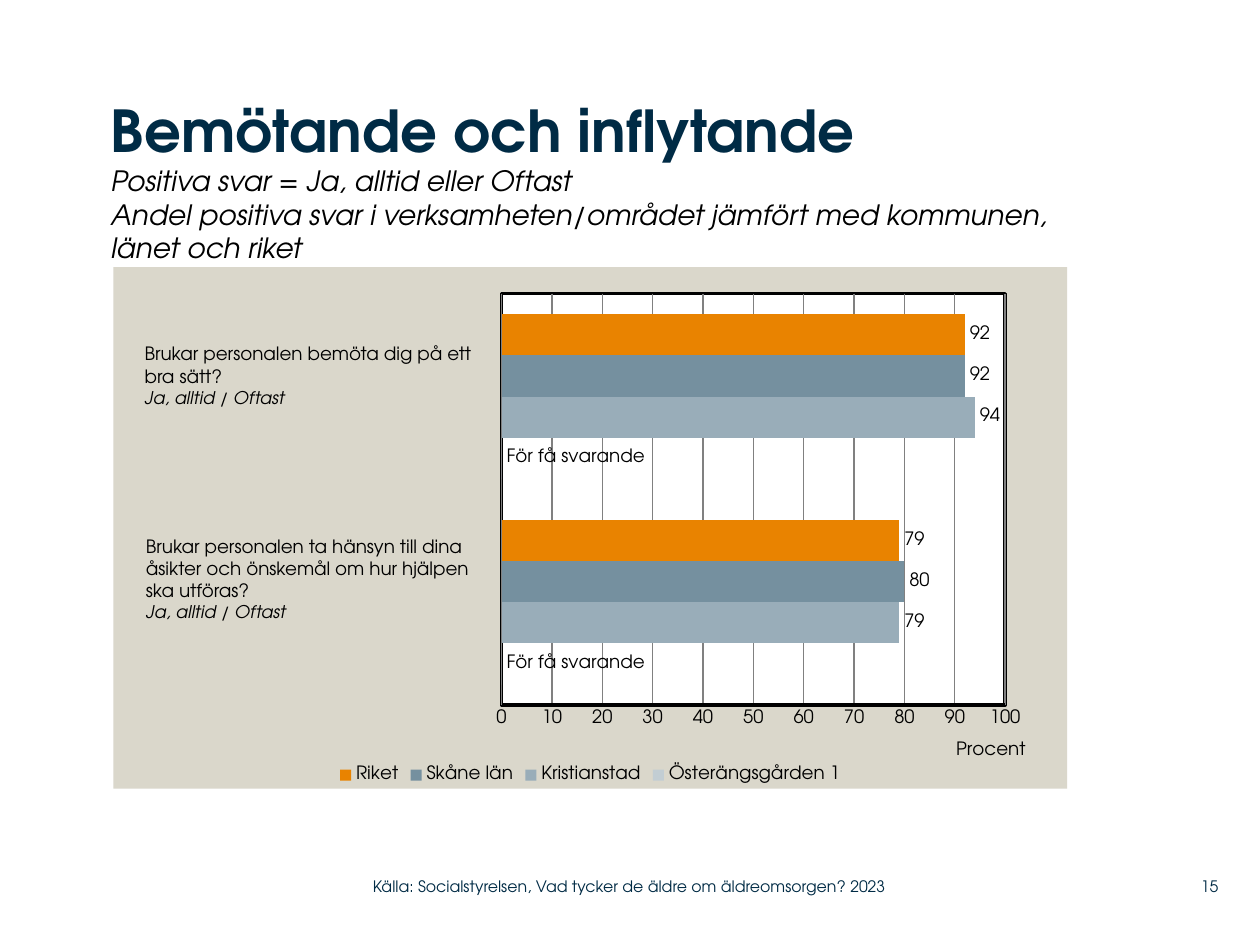
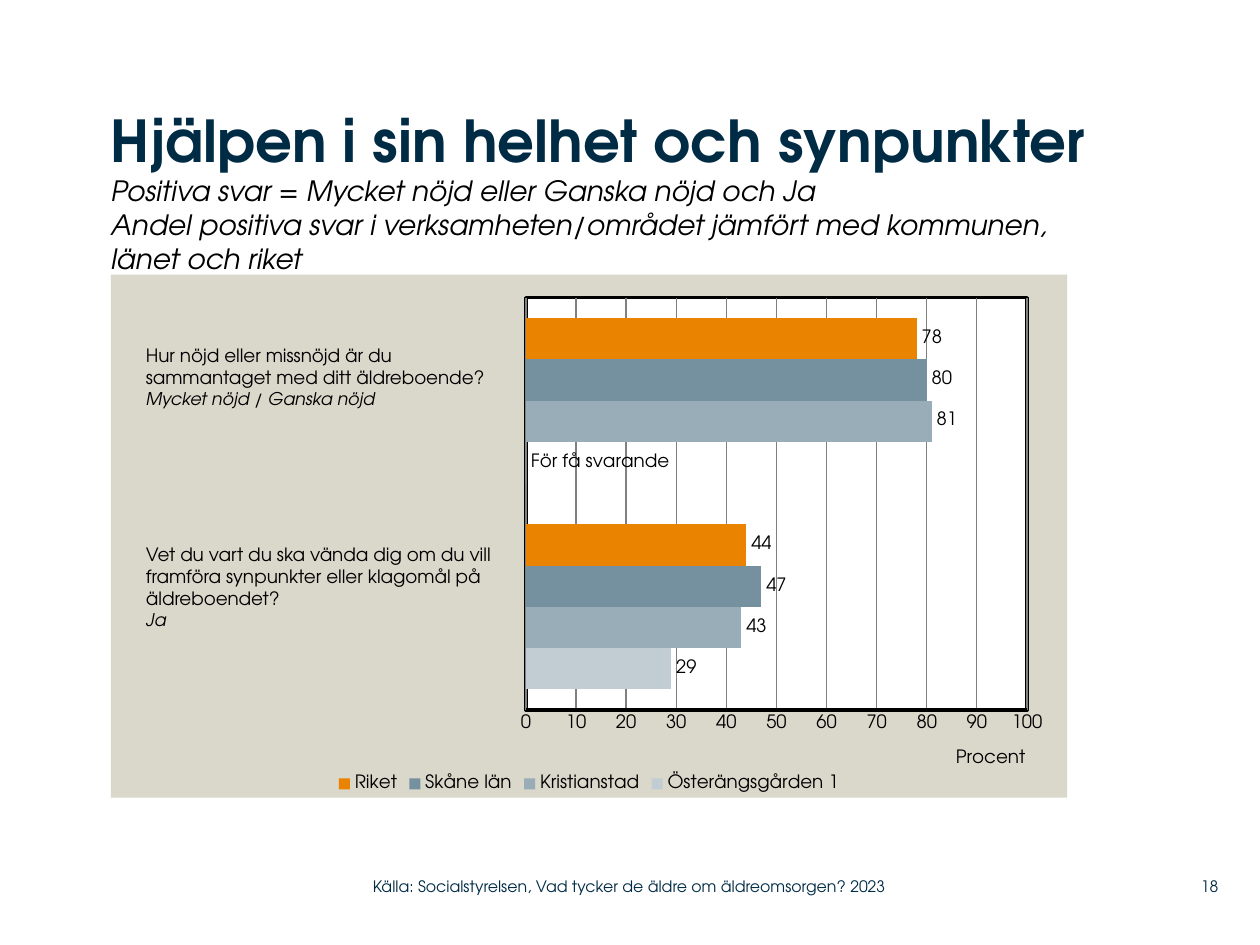
from copy import deepcopy

from pptx import Presentation
from pptx.chart.data import CategoryChartData
from pptx.dml.color import RGBColor
from pptx.enum.chart import XL_CHART_TYPE, XL_LABEL_POSITION, XL_LEGEND_POSITION, XL_TICK_MARK
from pptx.enum.text import MSO_ANCHOR, MSO_AUTO_SIZE, PP_ALIGN
from pptx.oxml import parse_xml
from pptx.oxml.ns import nsdecls, qn
from pptx.util import Inches, Pt

BAR_CLUSTERED = XL_CHART_TYPE.BAR_CLUSTERED
OUTSIDE_END = XL_LABEL_POSITION.OUTSIDE_END
LEGEND_BOTTOM = XL_LEGEND_POSITION.BOTTOM
NO_TICKS = XL_TICK_MARK.NONE
TOP, MIDDLE = MSO_ANCHOR.TOP, MSO_ANCHOR.MIDDLE
LEFT, RIGHT = PP_ALIGN.LEFT, PP_ALIGN.RIGHT
NO_AUTOFIT = MSO_AUTO_SIZE.NONE

FONT = "TeX Gyre Adventor"
NAVY = RGBColor(0x00, 0x2B, 0x45)
BLACK = RGBColor(0x00, 0x00, 0x00)
GRAY = RGBColor(0x80, 0x80, 0x80)
SAND = RGBColor(0xDA, 0xD7, 0xCB)
WHITE = RGBColor(0xFF, 0xFF, 0xFF)
SERIES_COLORS = {
    "Österängsgården 1": RGBColor(0xC2, 0xCD, 0xD3),
    "Kristianstad": RGBColor(0x99, 0xAD, 0xB9),
    "Skåne län": RGBColor(0x75, 0x90, 0x9F),
    "Riket": RGBColor(0xE9, 0x83, 0x00),
}

TITLE_ONLY = 5
BODY_SIZE = 10.5
TOO_FEW = "För få svarande"
COMPARISON = ("Andel positiva svar i verksamheten/området jämfört med kommunen, "
              "länet och riket")
SOURCE = "Källa: Socialstyrelsen, Vad tycker de äldre om äldreomsorgen? 2023"

SLIDES = [
    {
        "number": "15",
        "heading": "Bemötande och inflytande",
        "answers": "Positiva svar = Ja, alltid eller Oftast",
        "title_box": (0.88, 0.75, 8.04, 1.2),
        "chart_box": (0.9, 2.12, 7.57, 4.14),
        "plot": (0.407, 0.051, 0.528, 0.789),
        "values": [(0, 0), (79, 94), (80, 92), (79, 92)],
        "questions": [
            ((1.05, 2.67, 2.97, 0.81),
             ["Brukar personalen bemöta dig på ett", "bra sätt?"],
             "Ja, alltid / Oftast"),
            ((1.06, 4.2, 3.01, 0.98),
             ["Brukar personalen ta hänsyn till dina",
              "åsikter och önskemål om hur hjälpen", "ska utföras?"],
             "Ja, alltid / Oftast"),
        ],
    },
    {
        "number": "18",
        "heading": "Hjälpen i sin helhet och synpunkter",
        "answers": "Positiva svar = Mycket nöjd eller Ganska nöjd och Ja",
        "title_box": (0.88, 0.83, 7.79, 1.34),
        "chart_box": (0.88, 2.18, 7.59, 4.15),
        "plot": (0.434, 0.044, 0.524, 0.789),
        "values": [(29, 0), (43, 81), (47, 80), (44, 78)],
        "questions": [
            ((1.06, 2.68, 3.1, 0.81),
             ["Hur nöjd eller missnöjd är du", "sammantaget med ditt äldreboende?"],
             "Mycket nöjd / Ganska nöjd"),
            ((1.06, 4.26, 3.05, 0.81),
             ["Vet du vart du ska vända dig om du vill framföra synpunkter "
              "eller klagomål på äldreboendet?"],
             "Ja"),
        ],
    },
]


def set_layout(parent, index, **settings):
    """Give a chart part a manual layout as its child at index."""
    for layout in parent.findall(qn("c:layout")):
        parent.remove(layout)
    items = "".join(f'<c:{name} val="{value}"/>' for name, value in settings.items())
    parent.insert(index, parse_xml(
        f'<c:layout {nsdecls("c")}><c:manualLayout>{items}</c:manualLayout></c:layout>'))


def area_properties(fill, line):
    """Return the fill and outline of a chart area."""
    return parse_xml(
        f'<c:spPr {nsdecls("c", "a")}><a:solidFill><a:srgbClr val="{fill}"/></a:solidFill>'
        f'{line}</c:spPr>')


class SurveyDeck:
    """Hold the survey style and the current slide."""

    def __init__(self):
        self.presentation = Presentation()
        self.presentation.slide_width = Inches(10)
        self.presentation.slide_height = Inches(7.5)
        self.slide = None

    def add_slide(self):
        """Start a new slide."""
        layout = self.presentation.slide_layouts[TITLE_ONLY]
        self.slide = self.presentation.slides.add_slide(layout)

    def style(self, font, size, color=BLACK, bold=False, italic=False):
        """Apply the deck font."""
        font.name, font.size, font.color.rgb = FONT, Pt(size), color
        font.bold, font.italic = bold, italic

    def add_run(self, paragraph, text, size, **look):
        """Append a formatted run."""
        run = paragraph.add_run()
        run.text = text
        self.style(run.font, size, **look)
        return run

    def clear_margins(self, frame):
        """Remove the inner margins of a text frame."""
        frame.margin_left = frame.margin_right = 0
        frame.margin_top = frame.margin_bottom = 0

    def add_title(self, box, heading, subtitles):
        """Fill the title with a heading and italic lines below."""
        title = self.slide.shapes.title
        title.left, title.top, title.width, title.height = map(Inches, box)
        frame = title.text_frame
        frame.word_wrap, frame.auto_size, frame.vertical_anchor = True, NO_AUTOFIT, TOP
        self.clear_margins(frame)
        paragraph = frame.paragraphs[0]
        paragraph.alignment = LEFT
        run = self.add_run(paragraph, heading, 33, color=NAVY, bold=True)
        for subtitle in subtitles:
            paragraph.add_line_break()
            paragraph._p[-1].append(deepcopy(run._r.get_or_add_rPr()))
            run = self.add_run(paragraph, subtitle, 16, italic=True)

    def add_text_frame(self, box):
        """Add a wrapping text box and return its frame."""
        frame = self.slide.shapes.add_textbox(*map(Inches, box)).text_frame
        frame.word_wrap = True
        return frame

    def add_question(self, box, lines, answer):
        """Add a survey question with its positive answers in italics."""
        frame = self.add_text_frame(box)
        for index, line in enumerate(lines):
            paragraph = frame.add_paragraph() if index else frame.paragraphs[0]
            self.add_run(paragraph, line, BODY_SIZE)
        self.add_run(frame.add_paragraph(), answer, 10, italic=True)

    def add_footer(self, box, text, alignment):
        """Add a small navy footer text."""
        frame = self.add_text_frame(box)
        frame.vertical_anchor = MIDDLE
        self.clear_margins(frame)
        paragraph = frame.paragraphs[0]
        paragraph.alignment = alignment
        self.add_run(paragraph, text, 9, color=NAVY)

    def add_chart(self, box, plot_box, values):
        """Add the clustered bars for two questions."""
        data = CategoryChartData()
        data.categories = ["1", "2"]
        for name, series_values in zip(SERIES_COLORS, values):
            data.add_series(name, series_values)
        chart = self.slide.shapes.add_chart(BAR_CLUSTERED, *map(Inches, box), data).chart
        self.style(chart.font, BODY_SIZE)
        chart.has_title = False
        chart.has_legend = True
        chart.legend.position = LEGEND_BOTTOM
        chart.legend.include_in_layout = False
        self.style(chart.legend.font, BODY_SIZE)
        self.format_bars(chart.plots[0])
        self.format_axes(chart)
        self.format_areas(chart, plot_box)

    def format_bars(self, plot):
        """Colour the bars and label their values."""
        plot.gap_width, plot.overlap, plot.vary_by_categories = 100, 0, False
        for series in plot.series:
            series.invert_if_negative = False
            series.format.fill.solid()
            series.format.fill.fore_color.rgb = SERIES_COLORS[series.name]
            labels = series.data_labels
            labels.show_value, labels.position = True, OUTSIDE_END
            self.style(labels.font, BODY_SIZE)
            for index, value in enumerate(series.values):
                if value == 0:
                    label = series.points[index].data_label
                    paragraph = label.text_frame.paragraphs[0]
                    self.add_run(paragraph, TOO_FEW, BODY_SIZE)
                    label.position = OUTSIDE_END

    def format_axes(self, chart):
        """Hide the categories and set up the percent axis."""
        chart.category_axis.visible = False
        axis = chart.value_axis
        axis.minimum_scale, axis.maximum_scale, axis.major_unit = 0, 100, 10
        axis.major_tick_mark = axis.minor_tick_mark = NO_TICKS
        axis.format.line.color.rgb, axis.format.line.width = BLACK, Pt(2)
        axis.has_major_gridlines = True
        gridline = axis.major_gridlines.format.line
        gridline.color.rgb, gridline.width = GRAY, Pt(0.75)
        self.style(axis.tick_labels.font, BODY_SIZE)
        paragraph = axis.axis_title.text_frame.paragraphs[0]
        self.add_run(paragraph, "Procent", BODY_SIZE)
        set_layout(axis.axis_title._element, 1, xMode="edge", yMode="edge", x=0.88, y=0.9)

    def format_areas(self, chart, plot_box):
        """Fill the chart and place its framed plot area."""
        chart_element = chart._chartSpace.find(qn("c:chart"))
        chart_element.addnext(area_properties(SAND, "<a:ln><a:noFill/></a:ln>"))
        plot_area = chart_element.find(qn("c:plotArea"))
        x, y, width, height = plot_box
        set_layout(plot_area, 0, layoutTarget="inner", xMode="edge", yMode="edge",
                   x=x, y=y, w=width, h=height)
        plot_area.append(area_properties(
            WHITE, f'<a:ln w="{Pt(2)}"><a:solidFill><a:srgbClr val="{BLACK}"/>'
                   '</a:solidFill></a:ln>'))


def main():
    """Build the survey slides."""
    deck = SurveyDeck()
    for content in SLIDES:
        deck.add_slide()
        deck.add_chart(content["chart_box"], content["plot"], content["values"])
        deck.add_title(content["title_box"], content["heading"],
                       [content["answers"], COMPARISON])
        for question in content["questions"]:
            deck.add_question(*question)
        deck.add_footer((9.2, 6.89, 0.47, 0.29), content["number"], RIGHT)
        deck.add_footer((2.96, 6.89, 4.43, 0.29), SOURCE, LEFT)
    deck.presentation.save("out.pptx")


if __name__ == "__main__":
    main()
